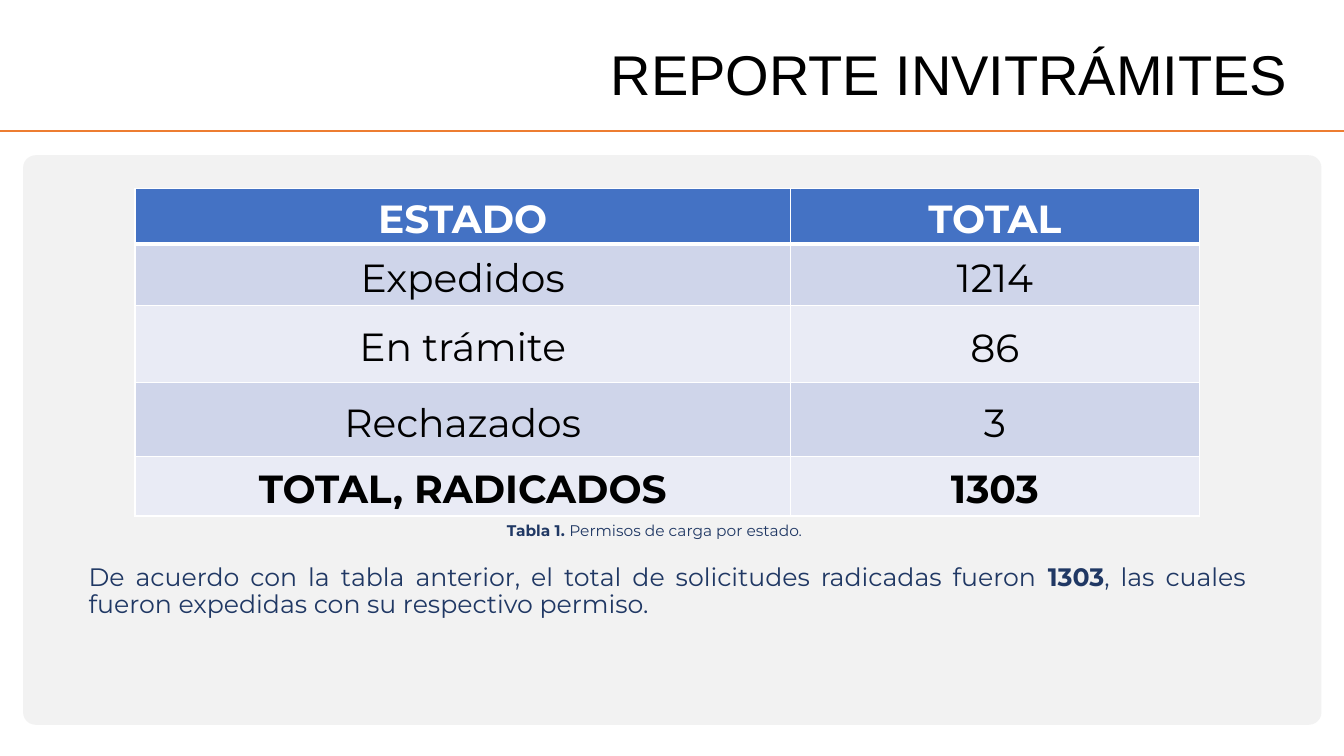
"""Build the permit status report slide with its table and summary."""
from lxml.etree import SubElement
from pptx import Presentation
from pptx.dml.color import RGBColor
from pptx.enum.shapes import MSO_CONNECTOR, MSO_SHAPE
from pptx.enum.text import MSO_ANCHOR, PP_ALIGN
from pptx.oxml.ns import qn
from pptx.util import Pt

TITLE = "REPORTE INVITRÁMITES"
STATUS_ROWS = [
    ("ESTADO", "TOTAL"),
    ("Expedidos", "1214"),
    ("En trámite", "86"),
    ("Rechazados", "3"),
    ("TOTAL, RADICADOS", "1303"),
]
CAPTION = [("Tabla 1. ", True), ("Permisos de carga por estado.", False)]
SUMMARY = [
    ("De acuerdo con la tabla anterior, el total de solicitudes radicadas fueron ", False),
    ("1303", True),
    (", las cuales fueron expedidas con su respectivo permiso.", False),
]

COLUMN_WIDTHS = (468, 292.3)
ROW_HEIGHTS = (39.6, 43.9, 55.4, 52.6, 42.5)
BODY_FONT = "Montserrat"
WHITE = RGBColor(0xFF, 0xFF, 0xFF)
BLACK = RGBColor(0, 0, 0)
ORANGE = RGBColor(0xED, 0x7D, 0x31)
PANEL_GRAY = RGBColor(0xF2, 0xF2, 0xF2)
HEADER_BLUE = RGBColor(0x44, 0x72, 0xC4)
BANDS = (RGBColor(0xE9, 0xEB, 0xF5), RGBColor(0xCF, 0xD5, 0xEA))
NAVY = RGBColor(0x20, 0x38, 0x64)


def style(paragraph, name, size, color, alignment, spacing=None):
    paragraph.font.name = name
    paragraph.font.size = Pt(size)
    paragraph.font.color.rgb = color
    paragraph.alignment = alignment
    paragraph.line_spacing = spacing


def add_text(slide, box, runs, name, size, color, alignment, spacing=None, insets=(7.2, 3.6)):
    shape = slide.shapes.add_textbox(*map(Pt, box))
    frame = shape.text_frame
    frame.word_wrap = True
    frame.margin_left = frame.margin_right = Pt(insets[0])
    frame.margin_top = frame.margin_bottom = Pt(insets[1])
    paragraph = frame.paragraphs[0]
    style(paragraph, name, size, color, alignment, spacing)
    for text, bold in runs:
        run = paragraph.add_run()
        run.text = text
        run.font.bold = bold
    return shape


def add_borders(cell, bottom_width):
    properties = cell._tc.get_or_add_tcPr()
    widths = {"a:lnL": 1, "a:lnR": 1, "a:lnT": 1, "a:lnB": bottom_width}
    for position, (tag, width) in enumerate(widths.items()):
        line = SubElement(properties, qn(tag), w=str(Pt(width)))
        fill = SubElement(line, qn("a:solidFill"))
        SubElement(fill, qn("a:srgbClr"), val=str(WHITE))
        properties.insert(position, line)


def add_status_table(slide):
    size = (sum(COLUMN_WIDTHS), sum(ROW_HEIGHTS))
    frame = slide.shapes.add_table(
        len(ROW_HEIGHTS), len(COLUMN_WIDTHS), Pt(96.5), Pt(134.6), *map(Pt, size))
    table = frame.table
    for column, width in zip(table.columns, COLUMN_WIDTHS):
        column.width = Pt(width)
    last = len(STATUS_ROWS) - 1
    for index, (row, height) in enumerate(zip(table.rows, ROW_HEIGHTS)):
        row.height = Pt(height)
        header = index == 0
        for column, (cell, text) in enumerate(zip(row.cells, STATUS_ROWS[index])):
            is_count = column == 1 and 0 < index < last
            cell.text = text
            cell.vertical_anchor = MSO_ANCHOR.MIDDLE
            cell.margin_left = cell.margin_right = Pt(0.7 if is_count else 3.6)
            cell.margin_top = Pt(0.7 if is_count else 0)
            cell.margin_bottom = Pt(0)
            cell.fill.solid()
            cell.fill.fore_color.rgb = HEADER_BLUE if header else BANDS[index % 2]
            paragraph = cell.text_frame.paragraphs[0]
            style(paragraph, BODY_FONT, 28, WHITE if header else BLACK, PP_ALIGN.CENTER, 1.15)
            paragraph.font.bold = index in (0, last)
            add_borders(cell, 3 if header else 1)


def main():
    presentation = Presentation()
    presentation.slide_width, presentation.slide_height = Pt(960), Pt(540)
    slide = presentation.slides.add_slide(presentation.slide_layouts[6])

    divider = slide.shapes.add_connector(
        MSO_CONNECTOR.STRAIGHT, Pt(0), Pt(93.6), presentation.slide_width, Pt(93.6))
    divider.line.color.rgb = ORANGE
    divider.line.width = Pt(2)
    SubElement(divider._element.spPr, qn("a:effectLst"))

    panel = slide.shapes.add_shape(
        MSO_SHAPE.ROUNDED_RECTANGLE, Pt(16.5), Pt(110.9), Pt(927.4), Pt(406.8))
    panel.adjustments[0] = 0.022
    panel.shadow.inherit = False
    panel.fill.solid()
    panel.fill.fore_color.rgb = PANEL_GRAY
    panel.line.fill.background()

    add_text(slide, (413.3, 30.2, 513.4, 48.2), [(TITLE, False)],
             "Arial", 40, BLACK, PP_ALIGN.RIGHT, 0.9)
    add_status_table(slide)
    add_text(slide, (355, 368.6, 243.4, 20.9), CAPTION, BODY_FONT, 11, NAVY, PP_ALIGN.JUSTIFY)
    add_text(slide, (58.3, 400.3, 836.6, 69.1), SUMMARY,
             BODY_FONT, 18, NAVY, PP_ALIGN.JUSTIFY, 0.9, (5, 2.9))
    presentation.save("out.pptx")


if __name__ == "__main__":
    main()
